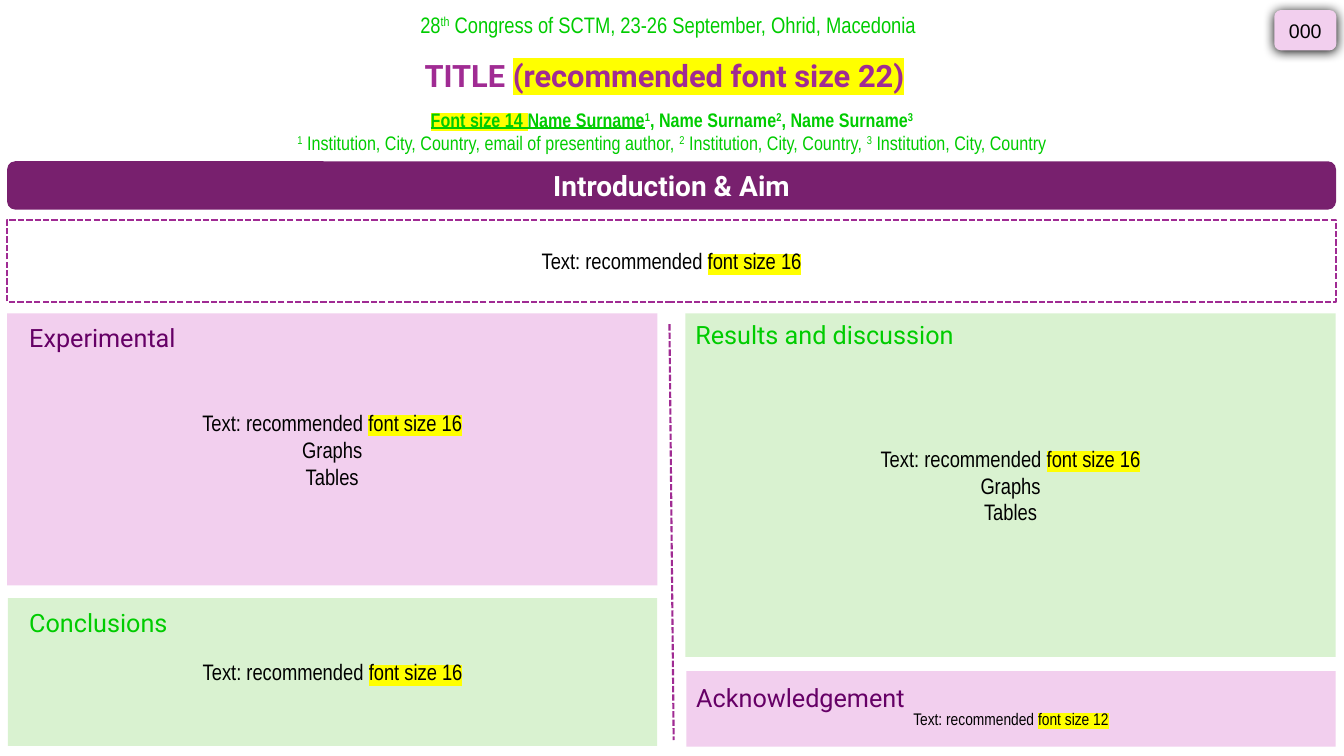
import pptx
import pptx.dml.color
import pptx.enum.dml
import pptx.enum.shapes
import pptx.enum.text
import pptx.oxml
import pptx.oxml.ns
import pptx.util

COLORS = {
    "green": "00CC00", "purple": "A02B93", "deep": "660066", "bar": "78206E",
    "pink": "F2CFEE", "mint": "D9F2D0", "yellow": "FFFF00",
    "white": "FFFFFF", "black": "000000",
}
FORMATS = {
    "header": {"size": 16, "name": "Arial Narrow", "color": "green"},
    "title": {"size": 22, "name": "Roboto", "bold": True, "color": "purple"},
    "author": {"size": 14, "name": "Arial Narrow", "bold": True, "color": "green"},
    "place": {"size": 14, "name": "Arial Narrow", "color": "green"},
    "bar": {"size": 20, "name": "Roboto", "bold": True, "color": "white"},
    "body": {"size": 16, "name": "Arial Narrow", "color": "black"},
    "small": {"size": 12, "name": "Arial Narrow", "color": "black"},
    "pink": {"size": 18, "name": "Roboto", "color": "deep"},
    "mint": {"size": 18, "name": "Roboto", "color": "green"},
    "badge": {"size": 14, "name": "Arial", "color": "black"},
}
MARK = {"mark": "yellow"}
SUP = {"sup": True}
LINED = {"underline": True}
SHAPE = pptx.enum.shapes.MSO_SHAPE
ALIGN = pptx.enum.text.PP_ALIGN
ANCHOR = pptx.enum.text.MSO_ANCHOR


class Poster:
    """Draws poster elements on a slide laid out in 160 columns and 90 rows."""

    def __init__(self, prs):
        self.slide = prs.slides.add_slide(prs.slide_layouts[6])
        self.col = prs.slide_width / 160
        self.row = prs.slide_height / 90

    def place(self, *at):
        return [round(v * (self.row if i % 2 else self.col)) for i, v in enumerate(at)]

    def rgb(self, name):
        return pptx.dml.color.RGBColor.from_string(COLORS[name])

    def run(self, p, text, style):
        r = p.add_run()
        r.text = text
        fmt = dict(style)
        fmt["size"] = pptx.util.Pt(fmt["size"])
        r.font.color.rgb = self.rgb(fmt.pop("color"))
        mark, sup = fmt.pop("mark", None), fmt.pop("sup", False)
        for key, value in fmt.items():
            setattr(r.font, key, value)
        rPr = r._r.get_or_add_rPr()
        if sup:
            rPr.set("baseline", "30000")
        if mark:
            rPr.find(pptx.oxml.ns.qn("a:solidFill")).addnext(pptx.oxml.parse_xml(
                f'<a:highlight {pptx.oxml.ns.nsdecls("a")}>'
                f'<a:srgbClr val="{COLORS[mark]}"/></a:highlight>'))

    def fill_text(self, tf, lines, align):
        tf.word_wrap = True
        for i, (style, runs) in enumerate(lines):
            p = tf.paragraphs[0] if i == 0 else tf.add_paragraph()
            p.alignment = align
            for text, extra in runs:
                self.run(p, text, {**FORMATS[style], **extra})

    def text(self, at, lines, align=ALIGN.CENTER):
        tf = self.slide.shapes.add_textbox(*self.place(*at)).text_frame
        self.fill_text(tf, lines, align)

    def dashed(self, line):
        line.color.rgb = self.rgb("purple")
        line.width = pptx.util.Pt(1.5)
        line.dash_style = pptx.enum.dml.MSO_LINE.SQUARE_DOT

    def box(self, at, lines, fill=None, kind=SHAPE.RECTANGLE, dashed=False):
        sp = self.slide.shapes.add_shape(kind, *self.place(*at))
        sp.shadow.inherit = False
        if fill:
            sp.fill.solid()
            sp.fill.fore_color.rgb = self.rgb(fill)
        else:
            sp.fill.background()
        if dashed:
            self.dashed(sp.line)
        else:
            sp.line.fill.background()
        sp.text_frame.vertical_anchor = ANCHOR.MIDDLE
        self.fill_text(sp.text_frame, lines, ALIGN.CENTER)
        return sp

    def divider(self, x1, y1, x2, y2):
        line = self.slide.shapes.add_connector(
            pptx.enum.shapes.MSO_CONNECTOR.STRAIGHT, *self.place(x1, y1, x2, y2))
        self.dashed(line.line)
        line._element.spPr.append(pptx.oxml.parse_xml(
            f'<a:effectLst {pptx.oxml.ns.nsdecls("a")}/>'))

    def panel(self, at, fill, heading, offset, width, lines):
        sp = self.box(at, lines, fill)
        self.text((at[0] + offset[0], at[1] + offset[1], width, 4.8),
                  [(fill, [(heading, {})])], ALIGN.LEFT)
        return sp

    def badge(self, at, label):
        sp = self.box(at, [("badge", [(label, {})])], "pink", SHAPE.ROUNDED_RECTANGLE)
        sp._element.spPr.find(pptx.oxml.ns.qn("a:effectLst")).append(pptx.oxml.parse_xml(
            f'<a:outerShdw {pptx.oxml.ns.nsdecls("a")} blurRad="107950" dist="12700" '
            f'dir="5400000"><a:srgbClr val="{COLORS["black"]}"/></a:outerShdw>'))


def advice(size, style="body"):
    return (style, [("Text: recommended ", {}), (f"font size {size}", MARK)])


def main():
    prs = pptx.Presentation()
    prs.slide_width, prs.slide_height = pptx.util.Inches(13.33), pptx.util.Inches(7.5)
    s = Poster(prs)

    s.text((0, 0.7, 159.1, 4.4), [("header", [
        ("28", {}), ("th", SUP),
        (" Congress of SCTM, 23-26 September, Ohrid, Macedonia", {})])])
    s.box((-0.9, 5.8, 160, 6.2), [("title", [
        ("TITLE ", {}), ("(recommended font size 22)", MARK)])], kind=SHAPE.ROUNDED_RECTANGLE)
    s.text((0, 12.2, 160, 6.8), [
        ("author", [
            ("Font size 14 ", {**LINED, **MARK}), ("Name Surname", LINED), ("1", SUP),
            (", Name Surname", {}), ("2", SUP), (", Name Surname", {}), ("3", SUP)]),
        ("place", [
            ("1", SUP), (" Institution, City, Country, email of presenting author, ", {}),
            ("2", SUP), (" Institution, City, Country, ", {}),
            ("3", SUP), (" Institution, City, Country", {})])])

    s.box((0.85, 26.15, 158.2, 9.8), [advice(16)], "white", dashed=True)
    s.box((0.85, 19.2, 158.2, 5.75), [("bar", [("Introduction & Aim", {})])],
          "bar", SHAPE.ROUNDED_RECTANGLE)
    s.divider(79.7, 38.6, 80.2, 88.1)

    content = [advice(16)] + [("body", [(word, {})]) for word in ("Graphs", "Tables")]
    s.panel((0.85, 37.3, 77.4, 32.4), "pink", "Experimental", (1.45, 0.5), 22.2, content)
    s.panel((0.95, 71.2, 77.3, 17.6), "mint", "Conclusions", (1.35, 0.5), 20, [advice(16)])
    s.panel((81.6, 37.3, 77.4, 40.9), "mint", "Results and discussion", (0, 0.1), 35.8, content)
    thanks = s.panel((81.7, 79.9, 77.3, 9), "pink", "Acknowledgement", (0, 0.7), 29.5,
                     [advice(12, "small")])
    thanks.text_frame.margin_top = round(2.9 * s.row)
    s.badge((151.7, 1.2, 7.4, 4.8), "000")

    prs.save("out.pptx")


if __name__ == "__main__":
    main()
